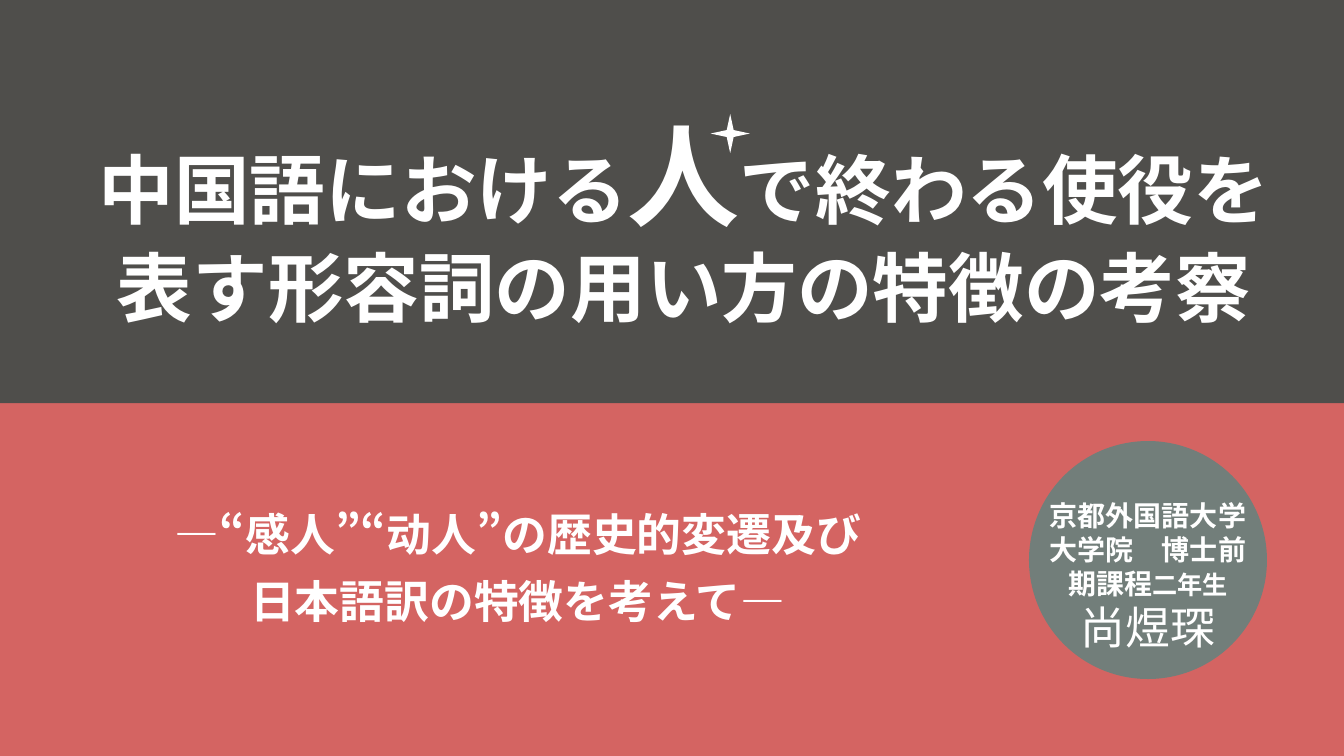
import pptx
import pptx.dml.color
import pptx.enum.lang
import pptx.enum.shapes
import pptx.enum.text
import pptx.oxml.ns
import pptx.util
from lxml import etree

Pt = pptx.util.Pt
MSO_SHAPE = pptx.enum.shapes.MSO_SHAPE
MSO_ANCHOR = pptx.enum.text.MSO_ANCHOR

THEME = {
    "dark": "4F4E4B", "coral": "D46462", "badge": "727E7A", "white": "FFFFFF",
    "ja": "Noto Sans CJK JP", "zh": "Noto Sans CJK SC",
    "accent_pt": 80, "title_pt": 54, "subtitle_pt": 32,
    "name_pt": 32, "school_pt": 20, "year_pt": 18,
}


def add_block(shapes, preset, box, color):
    sp = shapes.add_shape(preset, *[Pt(v) for v in box])
    sp.shadow.inherit = False
    sp.fill.solid()
    sp.fill.fore_color.rgb = pptx.dml.color.RGBColor.from_string(THEME[color])
    sp.line.fill.background()


def add_text(shapes, box, anchor, paragraphs):
    """Each paragraph is a list of (text, size key, font key, bold)."""
    tf = shapes.add_textbox(*[Pt(v) for v in box]).text_frame
    tf.word_wrap = True
    tf.vertical_anchor = anchor
    for i, runs in enumerate(paragraphs):
        p = tf.add_paragraph() if i else tf.paragraphs[0]
        p.alignment = pptx.enum.text.PP_ALIGN.CENTER
        for text, size, font, bold in runs:
            r = p.add_run()
            r.text = text
            r.font.size = Pt(THEME[size])
            r.font.bold = bold
            r.font.color.rgb = pptx.dml.color.RGBColor.from_string(THEME["white"])
            r.font.language_id = pptx.enum.lang.MSO_LANGUAGE_ID.JAPANESE
            r.font.name = THEME[font]
            # East Asian glyphs take their own typeface
            ea = etree.SubElement(r.font._element, pptx.oxml.ns.qn("a:ea"))
            ea.set("typeface", THEME[font])
    return tf


prs = pptx.Presentation()
prs.slide_width, prs.slide_height = Pt(960), Pt(540)
s = prs.slides.add_slide(prs.slide_layouts[6])

# Lower band
add_block(s.shapes, MSO_SHAPE.RECTANGLE, (0, 288, 960, 252), "coral")

# Author badge
badge = s.shapes.add_group_shape()
add_block(badge.shapes, MSO_SHAPE.OVAL, (735, 315, 170, 170), "badge")
add_text(badge.shapes, (738, 352, 164, 119), MSO_ANCHOR.MIDDLE, [
    [("京都外国語大学大学院　博士前期課程", "school_pt", "ja", True),
     ("二年生", "year_pt", "ja", True)],
    [("尚煜琛", "name_pt", "ja", False)],
])

# Upper band with the title
add_block(s.shapes, MSO_SHAPE.RECTANGLE, (0, 0, 960, 288), "dark")
add_text(s.shapes, (54.7, 72.7, 867.6, 142), MSO_ANCHOR.TOP, [
    [("中国語における", "title_pt", "ja", True),
     ("人", "accent_pt", "ja", True),
     ("で終わる使役を表す形容詞の用い方の特徴の考察", "title_pt", "ja", True)],
])

# Subtitle
subtitle = [
    [("―“", "ja"), ("感人", "zh"), ("”“", "ja"), ("动人", "zh"),
     ("”の歴史的変遷及び", "ja")],
    [("日本語訳の特徴を考えて―", "ja")],
]
tf = add_text(s.shapes, (21, 315, 680, 170), MSO_ANCHOR.MIDDLE, [
    [(text, "subtitle_pt", font, True) for text, font in runs] for runs in subtitle
])
for p in tf.paragraphs:
    p.line_spacing = 1.25
    pPr = p._p.get_or_add_pPr()
    pPr.set("marL", "0")
    pPr.set("indent", str(Pt(18)))

# Sparkle beside the enlarged character
add_block(s.shapes, MSO_SHAPE.STAR_4_POINT, (507.6, 81.4, 28, 28), "white")

prs.save("out.pptx")
